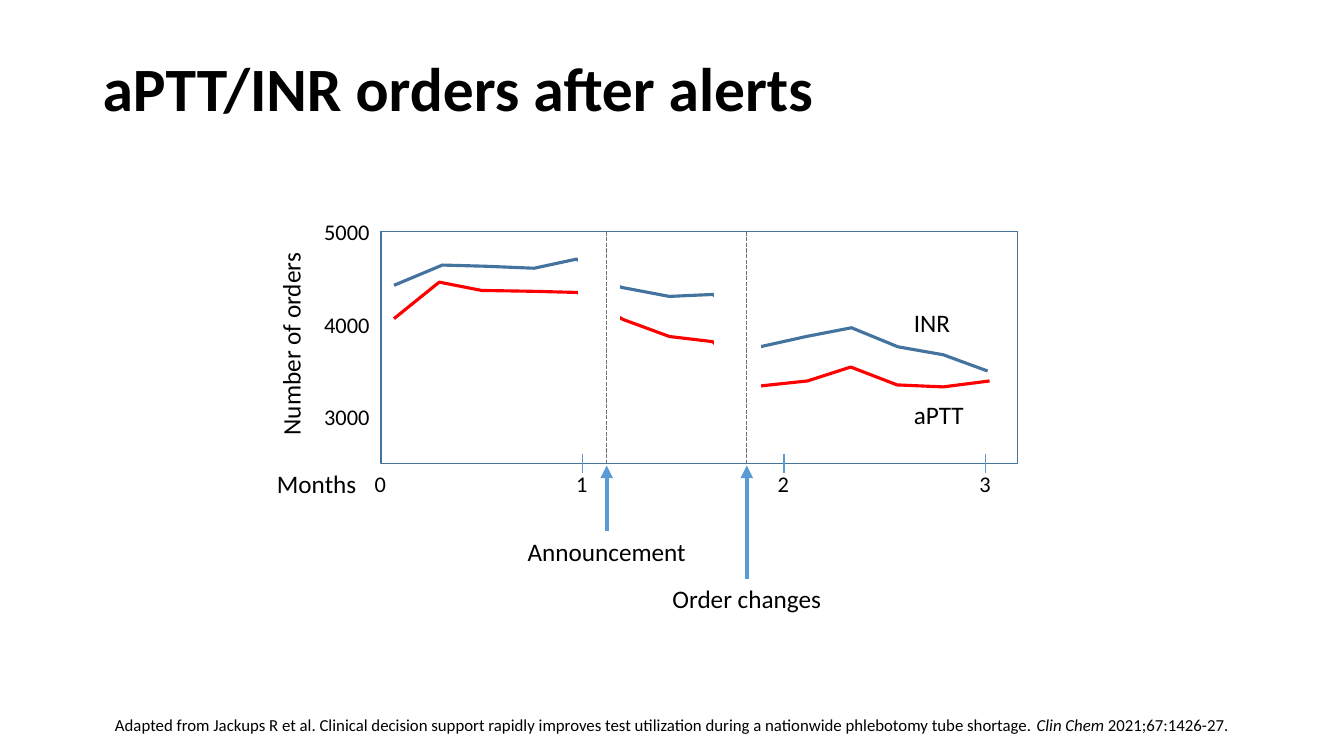
import pptx
import pptx.util
import pptx.dml.color
import pptx.enum.dml
import pptx.enum.shapes
import pptx.enum.text
import pptx.oxml

Cm, Pt = pptx.util.Cm, pptx.util.Pt
RGBColor = pptx.dml.color.RGBColor
ALIGN = pptx.enum.text.PP_ALIGN
BLACK = RGBColor(0x00, 0x00, 0x00)
WHITE = RGBColor(0xFF, 0xFF, 0xFF)
RED = RGBColor(0xFF, 0x00, 0x00)
STEEL = RGBColor(0x43, 0x73, 0x9E)
BLUE = RGBColor(0x5B, 0x9B, 0xD5)
GREY = RGBColor(0x76, 0x71, 0x71)

prs = pptx.Presentation()
prs.slide_width, prs.slide_height = Cm(33.87), Cm(19.05)
s = prs.slides.add_slide(prs.slide_layouts[5])


def add_text(runs, x, y, w, h, size=18, align=ALIGN.LEFT, wrap=False):
    """Text box from (text, format values) runs."""
    sp = s.shapes.add_textbox(Cm(x), Cm(y), Cm(w), Cm(h))
    tf = sp.text_frame
    tf.word_wrap = wrap
    tf.auto_size = pptx.enum.text.MSO_AUTO_SIZE.SHAPE_TO_FIT_TEXT
    p = tf.paragraphs[0]
    p.alignment = align
    for text, extra in runs:
        r = p.add_run()
        r.text = text
        values = {"name": "Calibri", "size": Pt(size), **extra}
        for name, value in values.items():
            setattr(r.font, name, value)
        r.font.color.rgb = BLACK
    return sp


def add_line(x, y1, y2, color, width=1):
    """Vertical line without a shadow."""
    c = s.shapes.add_connector(pptx.enum.shapes.MSO_CONNECTOR.STRAIGHT,
                               Cm(x), Cm(y1), Cm(x), Cm(y2))
    c.line.color.rgb = color
    c.line.width = Pt(width)
    c._element.spPr.append(pptx.oxml.parse_xml(
        '<a:effectLst xmlns:a="http://schemas.openxmlformats.org/drawingml/2006/main"/>'))
    return c


# Title
title = s.shapes.title
for name, value in {"left": 2.33, "top": 0.46, "width": 29.21, "height": 3.68}.items():
    setattr(title, name, Cm(value))
tf = title.text_frame
tf.vertical_anchor = pptx.enum.text.MSO_ANCHOR.MIDDLE
p = tf.paragraphs[0]
p.alignment, p.line_spacing = ALIGN.LEFT, 0.9
r = p.add_run()
r.text = "aPTT/INR orders after alerts"
for name, value in {"name": "Calibri", "size": Pt(44), "bold": True}.items():
    setattr(r.font, name, value)
r.font.color.rgb = BLACK

# Plot frame
LEFT, TOP, WIDTH, HEIGHT = 9.6, 5.84, 16.05, 5.84
BOTTOM = TOP + HEIGHT
RECT = pptx.enum.shapes.MSO_SHAPE.RECTANGLE
frame = s.shapes.add_shape(RECT, Cm(LEFT), Cm(TOP), Cm(WIDTH), Cm(HEIGHT))
frame.shadow.inherit = False
frame.fill.background()
frame.line.color.rgb = STEEL
frame.line.width = Pt(1)

# Series, in hundredths of a centimetre
series = [
    (STEEL, [(993, 719), (1115, 668), (1224, 671), (1346, 676), (1453, 653),
             (1565, 724), (1687, 747), (1798, 742), (1915, 874), (2032, 848),
             (2146, 826), (2263, 874), (2377, 894), (2489, 935)]),
    (RED, [(993, 803), (1107, 711), (1214, 732), (1336, 734), (1455, 737),
           (1570, 805), (1687, 848), (1796, 861), (1913, 973), (2035, 960),
           (2144, 925), (2261, 970), (2377, 975), (2494, 960)]),
]
for color, points in series:
    fb = s.shapes.build_freeform(*points[0], scale=Cm(0.01))
    fb.add_line_segments(points[1:], close=False)
    sp = fb.convert_to_shape()
    sp.shadow.inherit = False
    sp.fill.background()
    sp.line.color.rgb = color
    sp.line.width = Pt(2.25)

# Breaks in the series around each event
for x, y, w, h in [(14.58, 6.25, 1.04, 2.21), (18.01, 7.24, 1.14, 2.79)]:
    sp = s.shapes.add_shape(RECT, Cm(x), Cm(y), Cm(w), Cm(h))
    sp.shadow.inherit = False
    sp.fill.solid()
    sp.fill.fore_color.rgb = WHITE
    sp.line.color.rgb = WHITE
    sp.line.width = Pt(1)

# Axis labels and month ticks
for month in range(4):
    x = LEFT + 5.08 * month
    add_text([(str(month), {})], x - 0.41, 11.73, 0.82, 0.94, 16)
    if month:
        add_line(x, BOTTOM - 0.25, BOTTOM + 0.23, BLUE)
for i, orders in enumerate(["5000", "4000", "3000"]):
    add_text([(orders, {})], 7.92, 5.38 + 2.33 * i, 1.68, 0.94, 16)
add_text([("Months", {})], 6.73, 11.68, 2.54, 1.02)
axis_title = add_text([("Number of orders", {})], 4.75, 8.13, 5.16, 1.02)
axis_title.rotation = 270

# Series names
add_text([("INR", {})], 22.78, 7.62, 1.42, 1.02)
add_text([("aPTT", {})], 22.78, 9.93, 1.78, 1.02)

# Events: dashed line, label and arrow
for name, x, y, w in [("Announcement", 15.29, 13.39, 4.55),
                      ("Order changes", 18.82, 14.58, 4.29)]:
    dashed = add_line(x, TOP, BOTTOM, GREY)
    dashed.line.dash_style = pptx.enum.dml.MSO_LINE.SQUARE_DOT
    label = add_text([(name, {})], x - w / 2, y, w, 1.02, align=ALIGN.CENTER)
    arrow = add_line(x, y, 11.73, BLUE, 3)
    arrow.begin_connect(label, 0)
    arrow.line._get_or_add_ln().append(pptx.oxml.parse_xml(
        '<a:tailEnd xmlns:a="http://schemas.openxmlformats.org/drawingml/2006/main"'
        ' type="triangle"/>'))

# Citation
add_text([("Adapted from Jackups R et al. Clinical decision support rapidly improves test "
           "utilization during a nationwide phlebotomy tube shortage. ", {}),
          ("Clin Chem", {"italic": True}),
          (" 2021;67:1426-27.", {})],
         0.94, 17.88, 31.98, 0.76, 12, ALIGN.CENTER, wrap=True)

prs.save("out.pptx")
